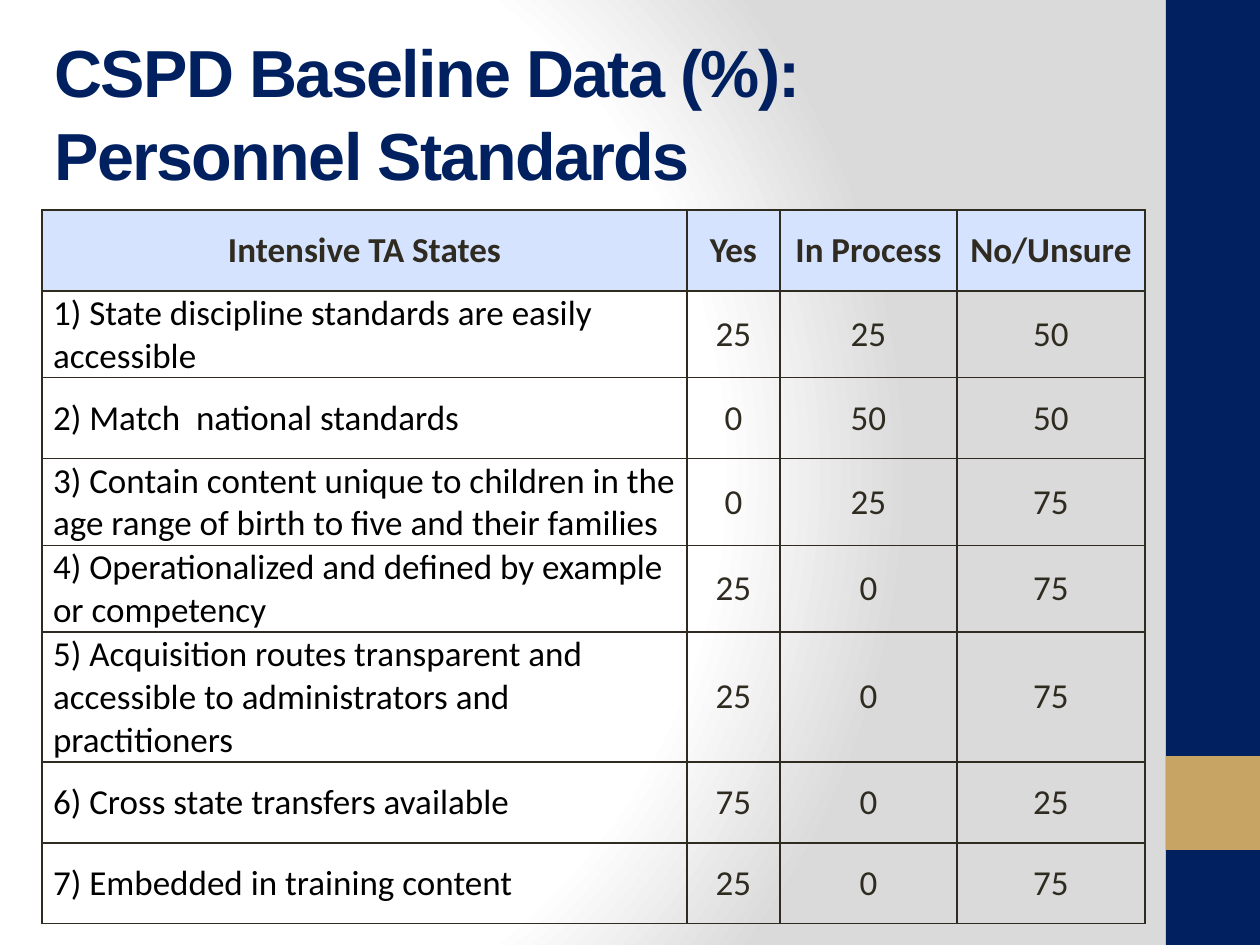
from lxml import etree
from pptx import Presentation
from pptx.dml.color import RGBColor
from pptx.enum.shapes import MSO_SHAPE
from pptx.enum.text import MSO_ANCHOR, PP_ALIGN
from pptx.oxml import parse_xml
from pptx.oxml.ns import nsdecls, qn
from pptx.util import Pt

PX = 914400 // 126
COLORS = {
    "navy": "002060",
    "gold": "C8A464",
    "ink": "2F2B20",
    "black": "000000",
    "header": "D6E3FF",
    "white": "FFFFFF",
    "gray": "DADADA",
}


def rgb(name):
    return RGBColor.from_string(COLORS[name])


def add_borders(cell):
    tc_pr = cell._tc.get_or_add_tcPr()
    for i, side in enumerate(("lnL", "lnR", "lnT", "lnB")):
        ln = etree.Element(qn(f"a:{side}"), w=str(Pt(1)))
        fill = etree.SubElement(ln, qn("a:solidFill"))
        etree.SubElement(fill, qn("a:srgbClr"), val=COLORS["ink"])
        tc_pr.insert(i, ln)


prs = Presentation()
prs.slide_width = 1260 * PX
prs.slide_height = 945 * PX
s = prs.slides.add_slide(prs.slide_layouts[5])

s.background.fill.solid()
solid = s._element.find(".//" + qn("p:bgPr")).find(qn("a:solidFill"))
stops = "".join(
    f'<a:gs pos="{pos * 1000}"><a:srgbClr val="{COLORS[name]}"/></a:gs>'
    for pos, name in ((0, "white"), (75, "white"), (100, "gray"))
)
solid.getparent().replace(solid, parse_xml(
    f'<a:gradFill rotWithShape="1" {nsdecls("a")}><a:gsLst>{stops}</a:gsLst>'
    '<a:path path="circle">'
    '<a:fillToRect l="20000" t="50000" r="100000" b="50000"/>'
    '</a:path></a:gradFill>'
))

for top, height, color in ((0, 945, "navy"), (756, 94, "gold")):
    sp = s.shapes.add_shape(
        MSO_SHAPE.RECTANGLE, 1166 * PX, top * PX, 94 * PX, height * PX)
    sp.shadow.inherit = False
    sp.fill.solid()
    sp.fill.fore_color.rgb = rgb(color)
    sp.line.fill.background()

title = s.shapes.title
title.left, title.top, title.width, title.height = (
    v * PX for v in (42, 32, 1071, 157))
tf = title.text_frame
tf.word_wrap = True
tf.vertical_anchor = MSO_ANCHOR.MIDDLE
p = tf.paragraphs[0]
p.alignment = PP_ALIGN.LEFT
p.line_spacing = 1.05
for i, text in enumerate(("CSPD Baseline Data (%): ", "Personnel Standards")):
    if i:
        p.add_line_break()
    r = p.add_run()
    r.text = text
    r.font.name = "Arial"
    r.font.size = Pt(38)
    r.font.bold = True
    r.font.color.rgb = rgb("navy")
    r._r.get_or_add_rPr().set("spc", "-100")

rows = [
    ("Intensive TA States", "Yes", "In Process", "No/Unsure"),
    ("1) State discipline standards are easily accessible", 25, 25, 50),
    ("2) Match  national standards", 0, 50, 50),
    ("3) Contain content unique to children in the age range of birth "
     "to five and their families", 0, 25, 75),
    ("4) Operationalized and defined by example or competency", 25, 0, 75),
    ("5) Acquisition routes transparent and accessible to administrators "
     "and practitioners", 25, 0, 75),
    ("6) Cross state transfers available", 75, 0, 25),
    ("7) Embedded in training content", 25, 0, 75),
]
col_widths = (645, 93, 177, 188)
row_height = 81
table = s.shapes.add_table(
    len(rows), len(col_widths), 42 * PX, 210 * PX,
    sum(col_widths) * PX, len(rows) * row_height * PX).table
for col, width in zip(table.columns, col_widths):
    col.width = width * PX

for i, row in enumerate(rows):
    table.rows[i].height = row_height * PX
    for j, value in enumerate(row):
        cell = table.cell(i, j)
        is_header = i == 0
        is_label = j == 0 and not is_header
        cell.vertical_anchor = MSO_ANCHOR.MIDDLE
        if is_header:
            cell.fill.solid()
            cell.fill.fore_color.rgb = rgb("header")
        else:
            cell.fill.background()
        add_borders(cell)
        p = cell.text_frame.paragraphs[0]
        if is_label:
            cell.margin_left = cell.margin_right = cell.margin_top = PX
            cell.margin_bottom = 0
            p._p.get_or_add_pPr().set("marL", str(10 * PX))
        else:
            p.alignment = PP_ALIGN.CENTER
        r = p.add_run()
        r.text = str(value)
        r.font.name = "Calibri"
        r.font.size = Pt(20)
        r.font.bold = is_header
        r.font.color.rgb = rgb("black" if is_label else "ink")

prs.save("out.pptx")
